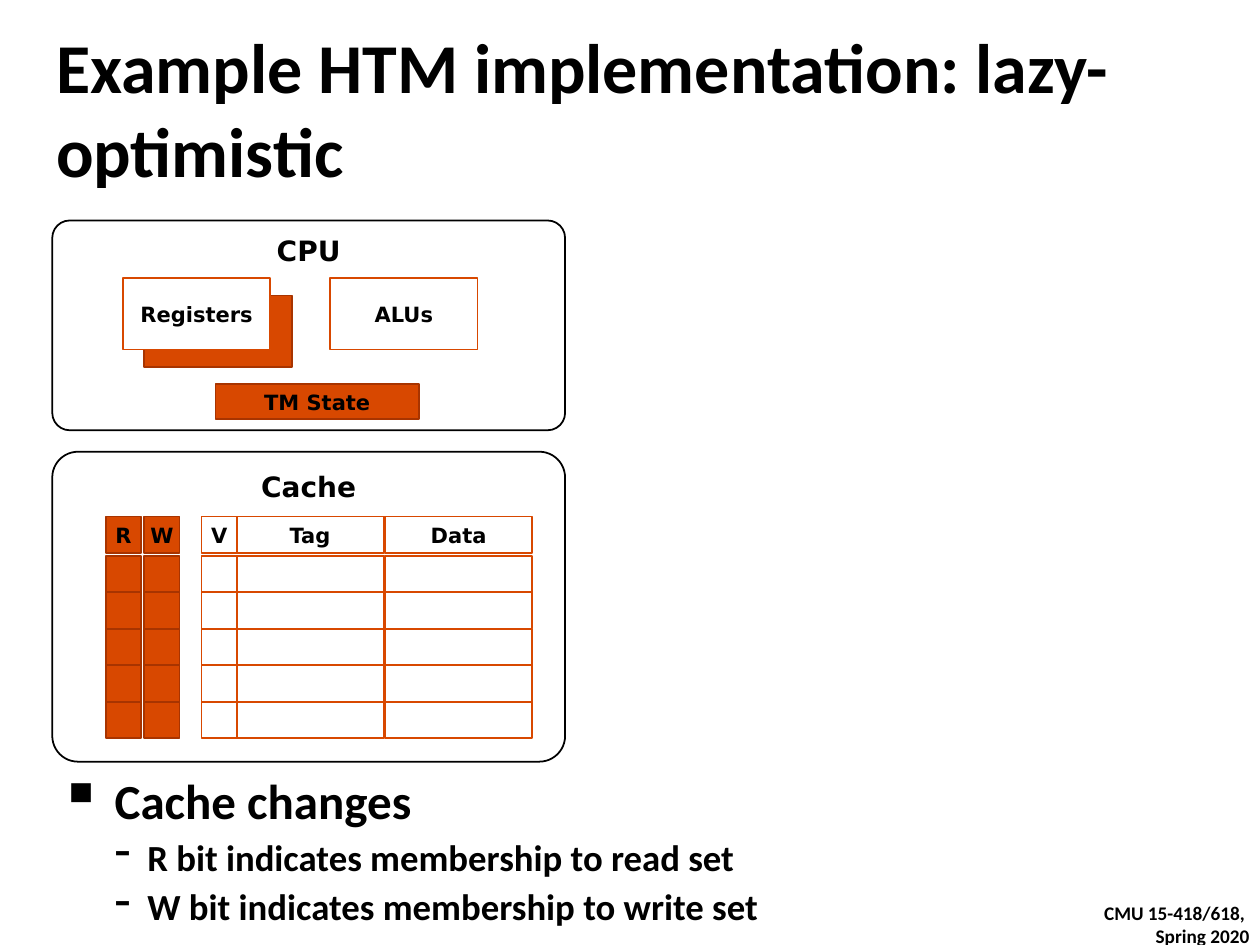
import pptx
import pptx.util
import pptx.dml.color
import pptx.enum.shapes
import pptx.enum.text
import pptx.oxml

Inches, Pt = pptx.util.Inches, pptx.util.Pt
RGB = pptx.dml.color.RGBColor
SHAPE = pptx.enum.shapes.MSO_SHAPE
ALIGN = pptx.enum.text.PP_ALIGN
ANCHOR = pptx.enum.text.MSO_ANCHOR

BLACK = RGB(0, 0, 0)
WHITE = RGB(255, 255, 255)
ORANGE = RGB(0xD8, 0x48, 0x00)
RUST = RGB(0xA8, 0x34, 0x00)
SANS, MONO = "Calibri", "DejaVu Sans"

# Content
TITLE = "Example HTM implementation: lazy-optimistic"
FOOTER = " CMU 15-418/618, \vSpring 2020"
# name, top, height, label top
PANELS = [("CPU", 3.5, 3.33, 3.67), ("Cache", 7.17, 4.92, 7.41)]
# label, box, is new for TM
UNITS = [
    ("", (2.29, 4.69, 2.34, 1.14), True),
    ("Registers", (1.95, 4.41, 2.34, 1.14), False),
    ("ALUs", (5.24, 4.41, 2.34, 1.14), False),
    ("TM State", (3.42, 6.1, 3.23, 0.55), True),
]
# label, left, width, is new for TM
COLUMNS = [
    ("Tag", 3.75, 2.34, False),
    ("Data", 6.11, 2.34, False),
    ("V", 3.2, 0.56, False),
    ("W", 2.29, 0.56, True),
    ("R", 1.68, 0.56, True),
]
HEAD, FIRST, CELL, LINES = 8.2, 8.82, 0.58, 5
# text, size, margin, hanging indent, bullet, bullet percent
POINTS = [
    ("Cache changes", 56, 0.88, 0.88, "▪", 120),
    ("R bit indicates membership to read set", 42, 1.4, 0.52, "-", 130),
    ("W bit indicates membership to write set", 42, 1.4, 0.52, "-", 130),
]

deck = pptx.Presentation()
deck.slide_width, deck.slide_height = Inches(20), Inches(15)
slide = deck.slides.add_slide(deck.slide_layouts[6])


def write(frame, text, size=24, font=MONO, align=ALIGN.CENTER,
          anchor=ANCHOR.MIDDLE, inset=0.06, more=False):
    """Put a bold paragraph into a text frame and return it."""
    frame.word_wrap = True
    frame.vertical_anchor = anchor
    frame.margin_left = frame.margin_right = Inches(inset)
    frame.margin_top = frame.margin_bottom = Inches(inset)
    para = frame.add_paragraph() if more else frame.paragraphs[0]
    para.text = text
    para.alignment = align
    for run in para.runs:
        run.font.size, run.font.name = Pt(size), font
        run.font.bold, run.font.color.rgb = True, BLACK
    return para


def text_box(*box):
    return slide.shapes.add_textbox(*map(Inches, box)).text_frame


def draw(kind, box, fill, line):
    shape = slide.shapes.add_shape(kind, *map(Inches, box))
    shape.shadow.inherit = False
    if fill is None:
        shape.fill.background()
    else:
        shape.fill.solid()
        shape.fill.fore_color.rgb = fill
    shape.line.color.rgb = line
    shape.line.width = Pt(2)
    return shape


def block(label, box, fresh):
    fill, line = (ORANGE, RUST) if fresh else (WHITE, ORANGE)
    shape = draw(SHAPE.RECTANGLE, box, fill, line)
    if label:
        write(shape.text_frame, label)


def add_bullet(para, margin, hang, mark, percent):
    props = para._p.get_or_add_pPr()
    props.set("marL", str(Inches(margin)))
    props.set("indent", str(-Inches(hang)))
    for tag, key, value in (("buSzPct", "val", str(percent * 1000)),
                            ("buChar", "char", mark)):
        part = pptx.oxml.parse_xml(
            '<a:%s xmlns:a="http://schemas.openxmlformats.org/'
            'drawingml/2006/main"/>' % tag)
        part.set(key, value)
        props.append(part)


# Title and footer
write(text_box(0.83, 0.32, 18.33, 2.8), TITLE, size=80, font=SANS,
      align=ALIGN.LEFT, anchor=ANCHOR.TOP)
write(text_box(16.51, 14.25, 3.38, 0.85), FOOTER, size=22, font=SANS,
      align=ALIGN.RIGHT)

# Panels
for name, top, height, label_top in PANELS:
    panel = draw(SHAPE.ROUNDED_RECTANGLE, (0.83, top, 8.14, height),
                 None, BLACK)
    panel.adjustments[0] = 0.083
    write(text_box(1, label_top, 7.8, 0.63), name, size=32,
          anchor=ANCHOR.TOP, inset=0.04)

# CPU units
for label, box, fresh in UNITS:
    block(label, box, fresh)

# Cache columns
for label, left, width, fresh in COLUMNS:
    block(label, (left, HEAD, width, CELL), fresh)
    for row in range(LINES):
        block("", (left, FIRST + row * CELL, width, CELL), fresh)

# Bullet points
body = text_box(0.88, 12.17, 17.67, 2.86)
for i, (text, size, *bullet) in enumerate(POINTS):
    para = write(body, text, size=size, font=SANS, align=ALIGN.LEFT,
                 anchor=ANCHOR.TOP, more=i > 0)
    para.space_before = Pt(6)
    add_bullet(para, *bullet)

deck.save("out.pptx")
